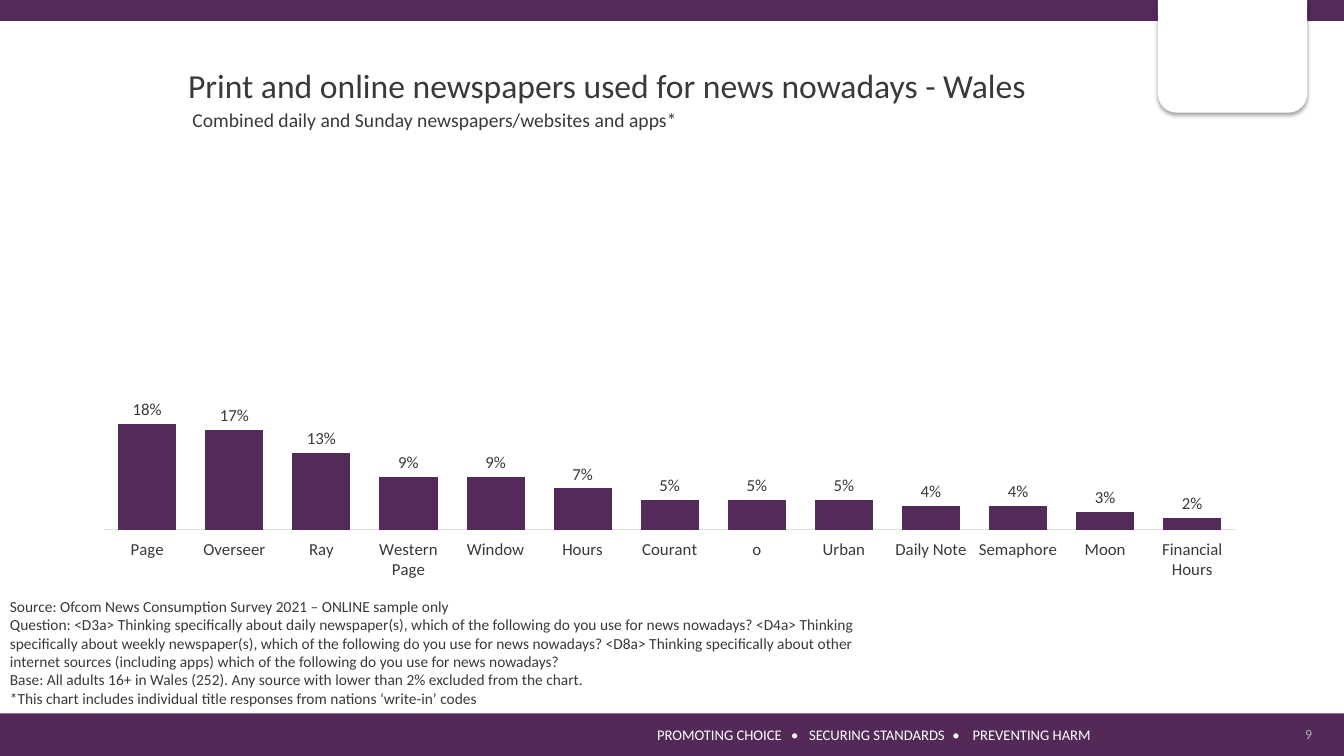
from dataclasses import dataclass

from lxml import etree
from pptx import Presentation
from pptx.chart.data import CategoryChartData
from pptx.dml.color import RGBColor
from pptx.enum.chart import XL_CHART_TYPE, XL_LABEL_POSITION, XL_TICK_LABEL_POSITION, XL_TICK_MARK
from pptx.enum.shapes import MSO_SHAPE
from pptx.enum.text import MSO_ANCHOR, PP_ALIGN
from pptx.oxml import parse_xml
from pptx.oxml.ns import qn
from pptx.util import Cm, Pt

RECT, TAB = MSO_SHAPE.RECTANGLE, MSO_SHAPE.ROUND_2_SAME_RECTANGLE
LEFT, CENTER, RIGHT = PP_ALIGN.LEFT, PP_ALIGN.CENTER, PP_ALIGN.RIGHT
COLUMN = XL_CHART_TYPE.COLUMN_CLUSTERED
OUTSIDE = XL_LABEL_POSITION.OUTSIDE_END
NO_TICK, LOW = XL_TICK_MARK.NONE, XL_TICK_LABEL_POSITION.LOW
MIDDLE = MSO_ANCHOR.MIDDLE

FACE, INK, PLUM, WHITE = "Calibri", "38393A", "532A59", "FFFFFF"
WIDE, HIGH = 33.87, 19.05


@dataclass
class Block:
    left: float
    top: float
    width: float
    height: float
    kind: int
    fill: str
    turn: float = 0


@dataclass
class Note:
    left: float
    top: float
    width: float
    height: float
    lines: tuple
    size: float
    ink: str = INK
    align: int = LEFT
    pad: tuple = (0.25, 0.25)
    wrap: bool = True
    stops: tuple = ()


BLOCKS = (
    Block(0, 17.98, WIDE, 1.1, RECT, "532A57"),
    Block(0, 0, WIDE, 0.53, RECT, PLUM),
    Block(29.18, 0, 3.76, 2.84, TAB, WHITE, 180),
)

NOTES = (
    Note(16.56, 18.16, 11.4, 0.71,
         ("PROMOTING CHOICE\t•\tSECURING STANDARDS\t•\tPREVENTING HARM",),
         10.5, WHITE, pad=(0, 0), stops=(3.38, 3.83, 7.44, 7.95)),
    Note(29.26, 18.16, 3.81, 0.76, ("9",), 10, "AEB0B1", RIGHT, (0.25, 0)),
    Note(4.6, 2.59, 12.85, 0.86,
         ("Combined daily and Sunday newspapers/websites and apps*",),
         14, wrap=False),
    Note(0, 14.91, 21.82, 3.07, (
        "Source: Ofcom News Consumption Survey 2021 – ONLINE sample only",
        "Question: <D3a> Thinking specifically about daily newspaper(s), which of the "
        "following do you use for news nowadays? <D4a> Thinking specifically about weekly "
        "newspaper(s), which of the following do you use for news nowadays? <D8a> Thinking "
        "specifically about other internet sources (including apps) which of the following "
        "do you use for news nowadays?",
        "Base: All adults 16+ in Wales (252). Any source with lower than 2% excluded from "
        "the chart.",
        "*This chart includes individual title responses from nations ‘write-in’ codes",
    ), 11),
)

SHARES = {
    "Page": 0.18, "Overseer": 0.17, "Ray": 0.13, "Western Page": 0.09,
    "Window": 0.09, "Hours": 0.07, "Courant": 0.05, "o": 0.05, "Urban": 0.05,
    "Daily Note": 0.04, "Semaphore": 0.04, "Moon": 0.03, "Financial Hours": 0.02,
}
PLOT = {"x": 0.062, "y": 0.017, "w": 0.929, "h": 0.871}


def color(code: str) -> RGBColor:
    return RGBColor.from_string(code)


def style(font, size: float, ink: str = INK) -> None:
    font.name, font.size = FACE, Pt(size)
    font.color.rgb = color(ink)


def draw_block(slide, item: Block) -> None:
    shape = slide.shapes.add_shape(
        item.kind, Cm(item.left), Cm(item.top), Cm(item.width), Cm(item.height))
    shape.shadow.inherit = False
    shape.fill.solid()
    shape.fill.fore_color.rgb = color(item.fill)
    shape.line.fill.background()
    shape.rotation = item.turn
    if item.kind == TAB:
        list_ = shape.element.spPr.find(qn("a:effectLst"))
        glow = etree.SubElement(
            list_, qn("a:outerShdw"), blurRad=str(Pt(3.1)), dist=str(Pt(1.8)),
            dir="5400000", rotWithShape="0")
        tint = etree.SubElement(glow, qn("a:srgbClr"), val="000000")
        etree.SubElement(tint, qn("a:alpha"), val="35000")


def draw_note(slide, item: Note) -> None:
    box = slide.shapes.add_textbox(
        Cm(item.left), Cm(item.top), Cm(item.width), Cm(item.height))
    frame = box.text_frame
    frame.word_wrap = item.wrap
    frame.margin_left, frame.margin_right = map(Cm, item.pad)
    frame.text = "\n".join(item.lines)
    for para in frame.paragraphs:
        para.alignment = item.align
        if item.stops:
            tabs = etree.SubElement(para._p.get_or_add_pPr(), qn("a:tabLst"))
            for stop in item.stops:
                etree.SubElement(tabs, qn("a:tab"), pos=str(Cm(stop)), algn="l")
        style(para.font, item.size, item.ink)


def draw_title(slide) -> None:
    title = slide.shapes.title
    title.left, title.top, title.width, title.height = map(Cm, (1.3, 1.5, 27.99, 1.27))
    frame = title.text_frame
    frame.text = "Print and online newspapers used for news nowadays - Wales"
    frame.vertical_anchor = MIDDLE
    para = frame.paragraphs[0]
    para.alignment = CENTER
    style(para.font, 24)


def draw_chart(slide) -> None:
    data = CategoryChartData(number_format="0%")
    data.categories = list(SHARES)
    data.add_series("Series 1", list(SHARES.values()))
    chart = slide.shapes.add_chart(
        COLUMN, Cm(0.71), Cm(2.77), Cm(30.71), Cm(11.91), data).chart
    chart.has_legend = chart.has_title = False
    style(chart.font, 10.5)

    base = chart.category_axis
    base.major_tick_mark = base.minor_tick_mark = NO_TICK
    base.tick_label_position = LOW
    base.format.line.color.rgb = color("E1E1E2")
    base.format.line.width = Pt(0.75)
    style(base.tick_labels.font, 12)
    scale = chart.value_axis
    scale.minimum_scale, scale.maximum_scale = 0, 0.7
    scale.has_major_gridlines = scale.visible = False

    plot = chart.plots[0]
    plot.gap_width = 50
    plot.vary_by_categories = False
    bars = plot.series[0]
    bars.format.fill.solid()
    bars.format.fill.fore_color.rgb = color(PLUM)
    tags = bars.data_labels
    tags.show_value = True
    tags.position = OUTSIDE
    tags.number_format, tags.number_format_is_linked = "0%", False
    style(tags.font, 12)

    area = chart.element.chart.plotArea
    for old in area.findall(qn("c:layout")):
        area.remove(old)
    modes = "".join(f'<c:{side}Mode val="edge"/>' for side in "xy")
    sizes = "".join(f'<c:{side} val="{part}"/>' for side, part in PLOT.items())
    area.insert(0, parse_xml(
        '<c:layout xmlns:c="http://schemas.openxmlformats.org/drawingml/2006/chart">'
        f'<c:manualLayout><c:layoutTarget val="inner"/>{modes}{sizes}'
        '</c:manualLayout></c:layout>'))


def main() -> None:
    deck = Presentation()
    deck.slide_width, deck.slide_height = Cm(WIDE), Cm(HIGH)
    slide = deck.slides.add_slide(deck.slide_layouts[5])
    for block in BLOCKS:
        draw_block(slide, block)
    draw_title(slide)
    draw_chart(slide)
    for note in NOTES:
        draw_note(slide, note)
    deck.save("out.pptx")


if __name__ == "__main__":
    main()
